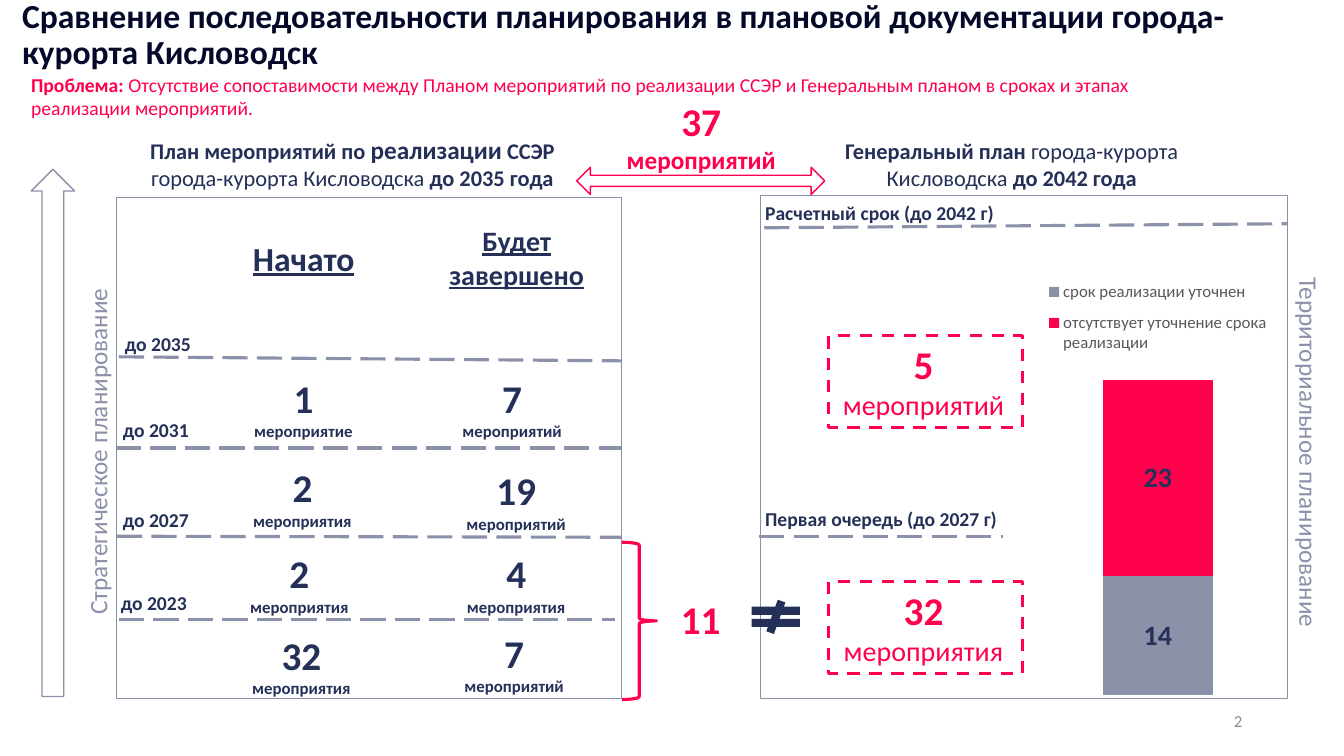
import lxml.etree
import pptx
import pptx.chart.data
import pptx.dml.color
import pptx.enum.chart
import pptx.enum.dml
import pptx.enum.shapes
import pptx.enum.text
import pptx.oxml.ns
import pptx.util
from dataclasses import dataclass

Inches, Pt = pptx.util.Inches, pptx.util.Pt
qn = pptx.oxml.ns.qn
KIND = pptx.enum.shapes.MSO_SHAPE
DASH = pptx.enum.dml.MSO_LINE
ALIGN = pptx.enum.text.PP_ALIGN
MIDDLE = pptx.enum.text.MSO_ANCHOR.MIDDLE


@dataclass
class Theme:
    font: str = "Calibri"
    ink: str = "04092A"
    navy: str = "243057"
    steel: str = "8B91A9"
    red: str = "FF004C"
    grey: str = "8C8C8C"
    key: str = "595959"
    huge: int = 28
    head: int = 24
    large: int = 20
    mid: int = 18
    body: int = 16
    note: int = 14
    small: int = 12


def rgb(code):
    return pptx.dml.color.RGBColor.from_string(code)


def apply(item, values):
    for name, value in values.items():
        setattr(item, name, value)


class Board:
    def __init__(self, slide, theme):
        self.slide, self.theme = slide, theme

    def type(self, font, size, color, bold=False, line=False):
        apply(font, {"name": self.theme.font, "size": Pt(size),
                     "bold": bold, "underline": line})
        font.color.rgb = rgb(color)

    def text(self, box, paras, color, align=ALIGN.LEFT, turn=0, wrap=True,
             anchor=None, space=None, line=False):
        """Each paragraph is a list of (words, size, bold) runs."""
        label = self.slide.shapes.add_textbox(*map(Inches, box))
        label.rotation = turn
        frame = label.text_frame
        apply(frame, {"word_wrap": wrap, "vertical_anchor": anchor})
        for i, runs in enumerate(paras):
            para = frame.add_paragraph() if i else frame.paragraphs[0]
            apply(para, {"alignment": align, "line_spacing": space})
            for words, size, bold in runs:
                run = para.add_run()
                run.text = words
                self.type(run.font, size, color, bold, line)

    def stroke(self, line, color, width, dash=None):
        line.color.rgb = rgb(color)
        apply(line, {"width": Pt(width), "dash_style": dash})

    def shape(self, kind, box, color, width=0, dash=None, fill=False):
        form = self.slide.shapes.add_shape(kind, *map(Inches, box))
        form.shadow.inherit = False
        if fill:
            form.fill.solid()
            form.fill.fore_color.rgb = rgb(color)
            form.line.fill.background()
        else:
            form.fill.background()
            self.stroke(form.line, color, width, dash)
        return form

    def rule(self, x1, y1, x2, y2):
        link = self.slide.shapes.add_connector(
            pptx.enum.shapes.MSO_CONNECTOR.STRAIGHT,
            *map(Inches, (x1, y1, x2, y2)))
        self.stroke(link.line, self.theme.steel, 2.25, DASH.LONG_DASH)
        lxml.etree.SubElement(link.element.spPr, qn("a:effectLst"))
        return link

    def place(self, part, index, box, inner=False):
        """Give a chart part a fixed spot, in shares of the chart."""
        for old in part.findall(qn("c:layout")):
            part.remove(old)
        layout = lxml.etree.Element(qn("c:layout"))
        part.insert(index, layout)
        spot = lxml.etree.SubElement(layout, qn("c:manualLayout"))
        marks = [("layoutTarget", "inner")] if inner else []
        marks += [("xMode", "edge"), ("yMode", "edge")]
        marks += zip("xywh", map(str, box))
        for name, value in marks:
            lxml.etree.SubElement(spot, qn("c:" + name)).set("val", value)

    def chart(self, box, group, rows):
        """Stack rows of (name, value, color) in one column."""
        data = pptx.chart.data.CategoryChartData()
        data.categories = [group]
        for name, value, _ in rows:
            data.add_series(name, [value])
        chart = self.slide.shapes.add_chart(
            pptx.enum.chart.XL_CHART_TYPE.COLUMN_STACKED,
            *map(Inches, box), data).chart
        theme = self.theme
        self.type(chart.font, theme.small, theme.key)
        apply(chart, {"has_title": False, "has_legend": True})
        apply(chart.legend, {"include_in_layout": False,
                             "position": pptx.enum.chart.XL_LEGEND_POSITION.BOTTOM})
        self.type(chart.legend.font, theme.small, theme.key)
        apply(chart.value_axis, {"minimum_scale": 0, "maximum_scale": 40,
                                 "has_major_gridlines": False, "visible": False})
        chart.category_axis.visible = False
        plot = chart.plots[0]
        apply(plot, {"gap_width": 150, "overlap": 100, "vary_by_categories": False})
        for series, (_, _, color) in zip(plot.series, rows):
            series.format.fill.solid()
            series.format.fill.fore_color.rgb = rgb(color)
            labels = series.data_labels
            apply(labels, {"show_value": True,
                           "position": pptx.enum.chart.XL_LABEL_POSITION.CENTER})
            self.type(labels.font, theme.large, theme.navy, True)
        root = chart.element
        self.place(root.find(".//" + qn("c:plotArea")), 0, (0.02, 0.24, 0.96, 0.73), True)
        self.place(root.find(".//" + qn("c:legend")), 1, (0.09, 0.06, 0.82, 0.2))


def main():
    deck = pptx.Presentation()
    apply(deck, {"slide_width": Inches(13.33), "slide_height": Inches(7.5)})
    t = Theme()
    board = Board(deck.slides.add_slide(deck.slide_layouts[6]), t)
    mid = ALIGN.CENTER

    # Title, problem and column heads
    board.text((0.12, 0.04, 12.31, 0.63), [[
        ("Сравнение последовательности планирования в плановой документации "
         "города-курорта Кисловодск", t.head, True)]], t.ink, anchor=MIDDLE, space=0.9)
    board.text((0.21, 0.67, 11.91, 0.57), [[
        ("Проблема: ", t.note, True),
        ("Отсутствие сопоставимости между Планом мероприятий по реализации ССЭР и "
         "Генеральным планом в сроках и этапах реализации мероприятий.",
         t.note, False)]], t.red)
    board.text((1.14, 1.28, 4.71, 0.67), [[
        ("План мероприятий по ", t.body, True), ("реализации", t.mid, True),
        (" ССЭР ", t.body, True), ("города-курорта Кисловодска ", t.body, False),
        ("до 2035 года", t.body, True)]], t.navy, mid)
    board.text((7.85, 1.31, 4.37, 0.64), [[
        ("Генеральный план ", t.body, True), ("города-курорта Кисловодска", t.body, False),
        (" до 2042 года", t.body, True)]], t.navy, mid)

    # Frames and side captions
    board.shape(KIND.UP_ARROW, (0.31, 1.68, 0.43, 5.23), t.steel, 1)
    left = board.shape(KIND.RECTANGLE, (1.15, 1.96, 5.01, 4.97), t.steel, 0.5)
    board.shape(KIND.RECTANGLE, (7.54, 1.94, 5.23, 4.99), t.steel, 0.5)
    for x, y, turn, words in ((-1.39, 4.28, 270, "Стратегическое планирование"),
                              (10.63, 4.29, 90, "Территориальное планирование")):
        board.text((x, y, 4.71, 0.4), [[(words, t.mid, False)]], t.steel, mid, turn)

    # Dashed rules; the one for 2031 halves the left frame
    for ends in ((1.18, 3.54, 6.17, 3.58), (1.16, 5.32, 6.17, 5.33),
                 (1.18, 6.15, 6.1, 6.15), (7.58, 2.26, 12.77, 2.22),
                 (7.53, 5.32, 9.95, 5.32)):
        board.rule(*ends)
    half = board.rule(1.15, 4.44, 6.16, 4.44)
    half.begin_connect(left, 1)
    half.end_connect(left, 3)

    # Stage names
    for x, y, words in ((1.14, 3.24, "до 2035"), (1.12, 4.1, "до 2031"),
                        (1.12, 4.99, "до 2027"), (1.1, 5.81, "до 2023"),
                        (7.49, 1.94, "Расчетный срок (до 2042 г)"),
                        (7.49, 4.98, "Первая очередь (до 2027 г)")):
        board.text((x, y, 3.16, 0.34), [[(words, t.note, True)]], t.navy)

    # Counts begun and done
    board.text((2.41, 2.31, 1.22, 0.5), [[("Начато", t.head, True)]],
               t.navy, wrap=False, line=True)
    board.text((4.26, 2.17, 1.73, 0.77), [[("Будет", t.large, True)],
               [("завершено", t.large, True)]], t.navy, mid, line=True)
    for x, y, count, end in ((2.28, 3.66, 1, "е"), (4.35, 3.66, 7, "й"),
                             (2.27, 4.55, 2, "я"), (4.39, 4.58, 19, "й"),
                             (2.24, 5.4, 2, "я"), (4.39, 5.4, 4, "я"),
                             (2.26, 6.21, 32, "я"), (4.37, 6.19, 7, "й")):
        board.text((x, y, 1.46, 0.77), [[(str(count), t.huge, True)],
                   [("мероприяти" + end, t.small, True)]], t.navy, mid)

    # General plan chart and framed counts
    board.chart((10.06, 2.41, 2.85, 4.62), "1",
                [("срок реализации уточнен", 14, t.steel),
                 ("отсутствует уточнение срока реализации", 23, t.red)])
    for y, count, word in ((3.33, "5", "мероприятий"), (5.77, "32", "мероприятия")):
        board.shape(KIND.RECTANGLE, (8.22, y, 1.92, 0.91), t.red, 2.25, DASH.DASH)
        board.text((8.14, y, 2.04, 0.91), [[(count, t.huge, True)],
                   [(word, t.large, False)]], t.red, mid)

    # Link between both plans
    arrow = board.shape(KIND.LEFT_RIGHT_ARROW, (5.72, 1.66, 2.46, 0.27), t.red, 1)
    arrow.adjustments[0] = 0.41
    board.text((6.06, 0.92, 1.79, 0.88), [[
        ("37", t.huge, True), (" мероприятий", t.mid, True)]], t.red, mid)
    board.shape(KIND.RIGHT_BRACE, (6.17, 5.38, 0.34, 1.56), t.red, 2.25)
    board.text((6.65, 5.86, 0.6, 0.57), [[("11", t.huge, True)]], t.red, mid, wrap=False)
    board.shape(KIND.MATH_NOT_EQUAL, (7.37, 5.95, 0.65, 0.34), t.navy, fill=True)

    # Page number
    board.text((9.42, 6.95, 3, 0.4), [[("2", t.small, False)]], t.grey,
               ALIGN.RIGHT, anchor=MIDDLE)
    deck.save("out.pptx")


if __name__ == "__main__":
    main()
